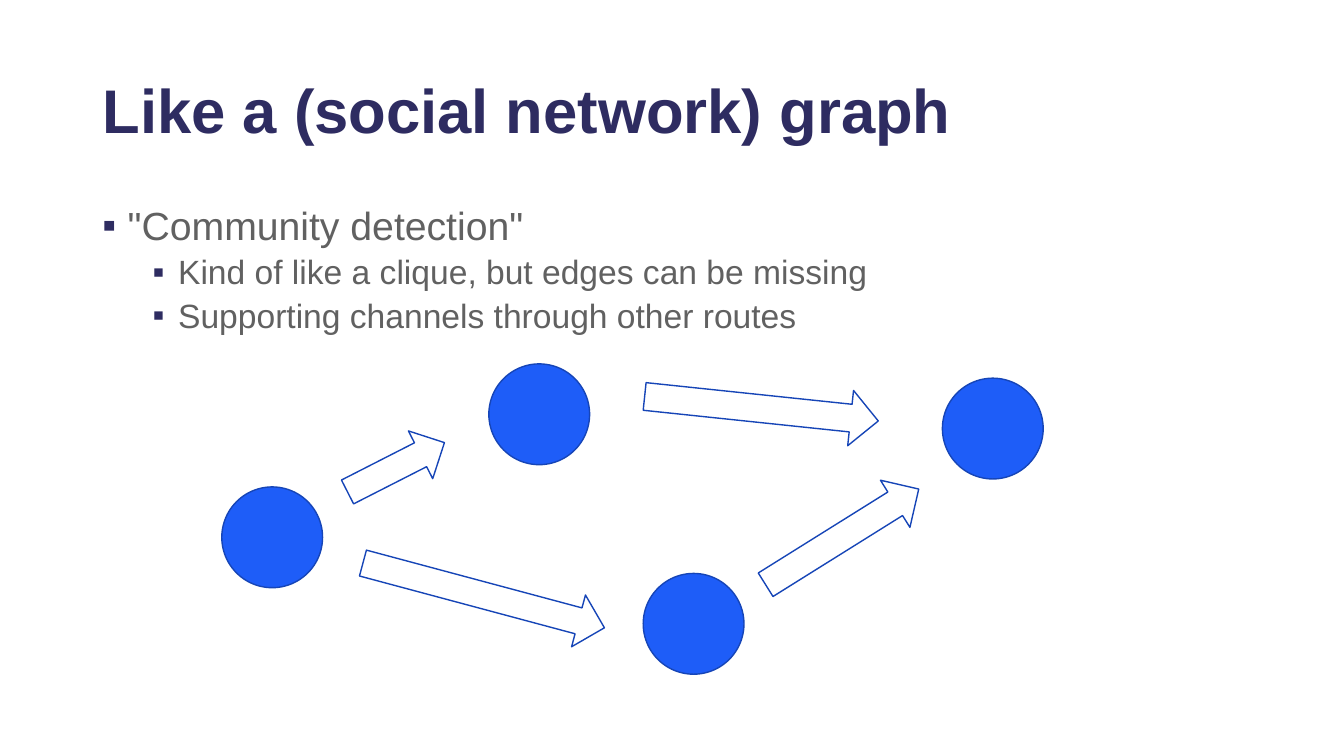
from lxml import etree
from pptx import Presentation
from pptx import util as u
from pptx.dml.color import RGBColor
from pptx.enum import shapes, text
from pptx.oxml.ns import qn

TITLE = "Like a (social network) graph"
BULLETS = [
    (0, '"Community detection"'),
    (1, "Kind of like a clique, but edges can be missing"),
    (1, "Supporting channels through other routes"),
]
LEVELS = [
    {"size": 28, "margin": 0.64, "before": 10},
    {"size": 24, "margin": 1.91, "before": 5},
]
HANGING = 0.64
NODE_SIZE = 2.54
NODES = [(5.59, 12.27), (16.21, 14.45), (12.32, 9.17), (23.75, 9.53)]
ARROWS = [
    (16.23, 9.6, 5.92, 1.4, 6),
    (9.04, 14.33, 6.3, 1.35, 15),
    (8.61, 11.1, 2.74, 1.35, 333),
    (18.95, 12.83, 4.55, 1.4, 328),
]
COLORS = {
    "heading": "2E2C61",
    "body": "616161",
    "node": "1E5DF8",
    "outline": "1645B7",
    "arrow": "FFFFFF",
}
FONT = "Arial"


def color(name):
    return RGBColor.from_string(COLORS[name])


def style_paragraph(paragraph, size, color_name, bold=False):
    paragraph.alignment = text.PP_ALIGN.LEFT
    paragraph.line_spacing = 0.9
    paragraph.font.name = FONT
    paragraph.font.size = u.Pt(size)
    paragraph.font.bold = bold
    paragraph.font.color.rgb = color(color_name)


def add_bullet(paragraph, margin):
    properties = paragraph._p.get_or_add_pPr()
    properties.set("marL", str(u.Cm(margin)))
    properties.set("indent", str(-u.Cm(HANGING)))
    bullet_color = etree.SubElement(properties, qn("a:buClr"))
    etree.SubElement(bullet_color, qn("a:srgbClr"), val=COLORS["heading"])
    etree.SubElement(properties, qn("a:buFont"), typeface=FONT)
    etree.SubElement(properties, qn("a:buChar"), char="▪")


def add_title(slide):
    title = slide.shapes.title
    title.left, title.top = u.Cm(2.33), u.Cm(1.02)
    title.width, title.height = u.Cm(29.21), u.Cm(3.68)
    frame = title.text_frame
    frame.text = TITLE
    frame.word_wrap = True
    frame.auto_size = text.MSO_AUTO_SIZE.NONE
    frame.vertical_anchor = text.MSO_ANCHOR.MIDDLE
    style_paragraph(frame.paragraphs[0], 44, "heading", True)


def add_bullets(slide):
    box = slide.shapes.add_textbox(u.Cm(2.33), u.Cm(5.08), u.Cm(29.21), u.Cm(12.09))
    frame = box.text_frame
    frame.word_wrap = True
    for index, (level, wording) in enumerate(BULLETS):
        paragraph = frame.paragraphs[0] if index == 0 else frame.add_paragraph()
        paragraph.text = wording
        paragraph.level = level
        look = LEVELS[level]
        paragraph.space_before = u.Pt(look["before"])
        style_paragraph(paragraph, look["size"], "body")
        add_bullet(paragraph, look["margin"])


def add_figure(slide, kind, box, fill, rotation=0):
    shape = slide.shapes.add_shape(kind, *map(u.Cm, box))
    shape.rotation = rotation
    shape.shadow.inherit = False
    shape.fill.solid()
    shape.fill.fore_color.rgb = color(fill)
    shape.line.color.rgb = color("outline")
    shape.line.width = u.Pt(1)


def main():
    presentation = Presentation()
    presentation.slide_width, presentation.slide_height = u.Cm(33.87), u.Cm(19.05)
    slide = presentation.slides.add_slide(presentation.slide_layouts[5])
    add_title(slide)
    add_bullets(slide)
    for left, top in NODES:
        add_figure(slide, shapes.MSO_SHAPE.OVAL, (left, top, NODE_SIZE, NODE_SIZE), "node")
    for *box, rotation in ARROWS:
        add_figure(slide, shapes.MSO_SHAPE.RIGHT_ARROW, box, "arrow", rotation)
    presentation.save("out.pptx")


if __name__ == "__main__":
    main()
